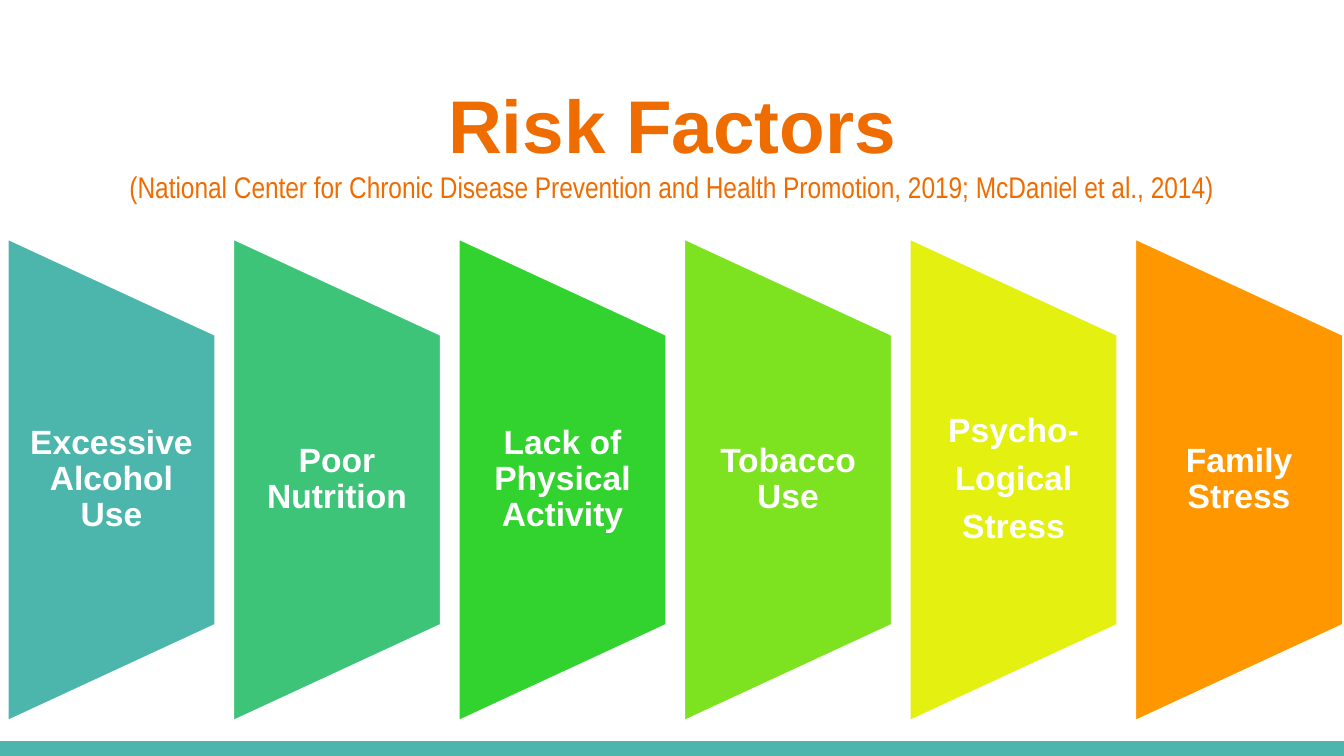
from pptx import Presentation
from pptx.dml.color import RGBColor
from pptx.enum.shapes import MSO_SHAPE
from pptx.enum.text import MSO_ANCHOR, MSO_AUTO_SIZE, PP_ALIGN
from pptx.util import Inches, Pt

COLORS = {"teal": "4DB6AC", "green": "3EC479", "bright": "32D32E", "lime": "7DE21F",
          "yellow": "E3F010", "amber": "FF9800", "title": "EF6C00", "white": "FFFFFF"}


def rgb(name):
    return RGBColor.from_string(COLORS[name])


def add_run(p, text, size, font, color, bold):
    r = p.add_run()
    r.text = text
    r.font.size = Pt(size)
    r.font.name = font
    r.font.bold = bold
    r.font.color.rgb = rgb(color)


# 16:9 slide
prs = Presentation()
prs.slide_width = Inches(10)
prs.slide_height = Inches(10 * 9 / 16)
s = prs.slides.add_slide(prs.slide_layouts[5])

# Bottom bar
bar_h = Inches(0.11)
bar = s.shapes.add_shape(MSO_SHAPE.RECTANGLE, 0, prs.slide_height - bar_h,
                         prs.slide_width, bar_h)
bar.shadow.inherit = False
bar.fill.solid()
bar.fill.fore_color.rgb = rgb("teal")
bar.line.fill.background()

# Title and citation
title = s.shapes.title
title.left, title.top = Inches(0.34), Inches(0.49)
title.width, title.height = Inches(9.32), Inches(1.02)
tf = title.text_frame
tf.auto_size = MSO_AUTO_SIZE.NONE
tf.vertical_anchor = MSO_ANCHOR.TOP
tf.margin_left = tf.margin_right = Inches(0.1)
tf.margin_top = tf.margin_bottom = Inches(0.1)
p = tf.paragraphs[0]
p.alignment = PP_ALIGN.CENTER
add_run(p, "Risk Factors", 40, "Arial", "title", True)
p.add_line_break()
add_run(p, "(National Center for Chronic Disease Prevention and Health Promotion, 2019; "
        "McDaniel et al., 2014)", 16, "Arial Narrow", "title", False)

# Risk factor panels: a rotated trapezoid with a label on top
factors = [
    ("teal", ["Excessive Alcohol Use"]),
    ("green", ["Poor Nutrition"]),
    ("bright", ["Lack of Physical Activity"]),
    ("lime", ["Tobacco Use"]),
    ("yellow", ["Psycho-", "Logical", "Stress"]),
    ("amber", ["Family Stress"]),
]
first_left, last_left = 0.05, 8.44
step = (last_left - first_left) / (len(factors) - 1)
panel_w, panel_h, label_h, center_y = 1.56, 3.61, 2.17, 3.57

for i, (color, lines) in enumerate(factors):
    left = first_left + i * step
    sp = s.shapes.add_shape(
        MSO_SHAPE.FLOWCHART_MANUAL_OPERATION,
        Inches(left + (panel_w - panel_h) / 2), Inches(center_y - panel_w / 2),
        Inches(panel_h), Inches(panel_w))
    sp.rotation = 270
    sp.shadow.inherit = False
    sp.fill.solid()
    sp.fill.fore_color.rgb = rgb(color)
    sp.line.color.rgb = rgb("white")
    sp.line.width = Pt(2)

    label = s.shapes.add_textbox(Inches(left), Inches(center_y - label_h / 2),
                                 Inches(panel_w), Inches(label_h))
    tf = label.text_frame
    tf.word_wrap = True
    tf.vertical_anchor = MSO_ANCHOR.MIDDLE
    tf.margin_left = tf.margin_right = Inches(0.12)
    tf.margin_top = tf.margin_bottom = 0
    for n, line in enumerate(lines):
        p = tf.add_paragraph() if n else tf.paragraphs[0]
        p.alignment = PP_ALIGN.CENTER
        p.line_spacing = 0.9
        p.space_after = Pt(6.3)
        add_run(p, line, 18, "Arial", "white", True)

prs.save("out.pptx")
